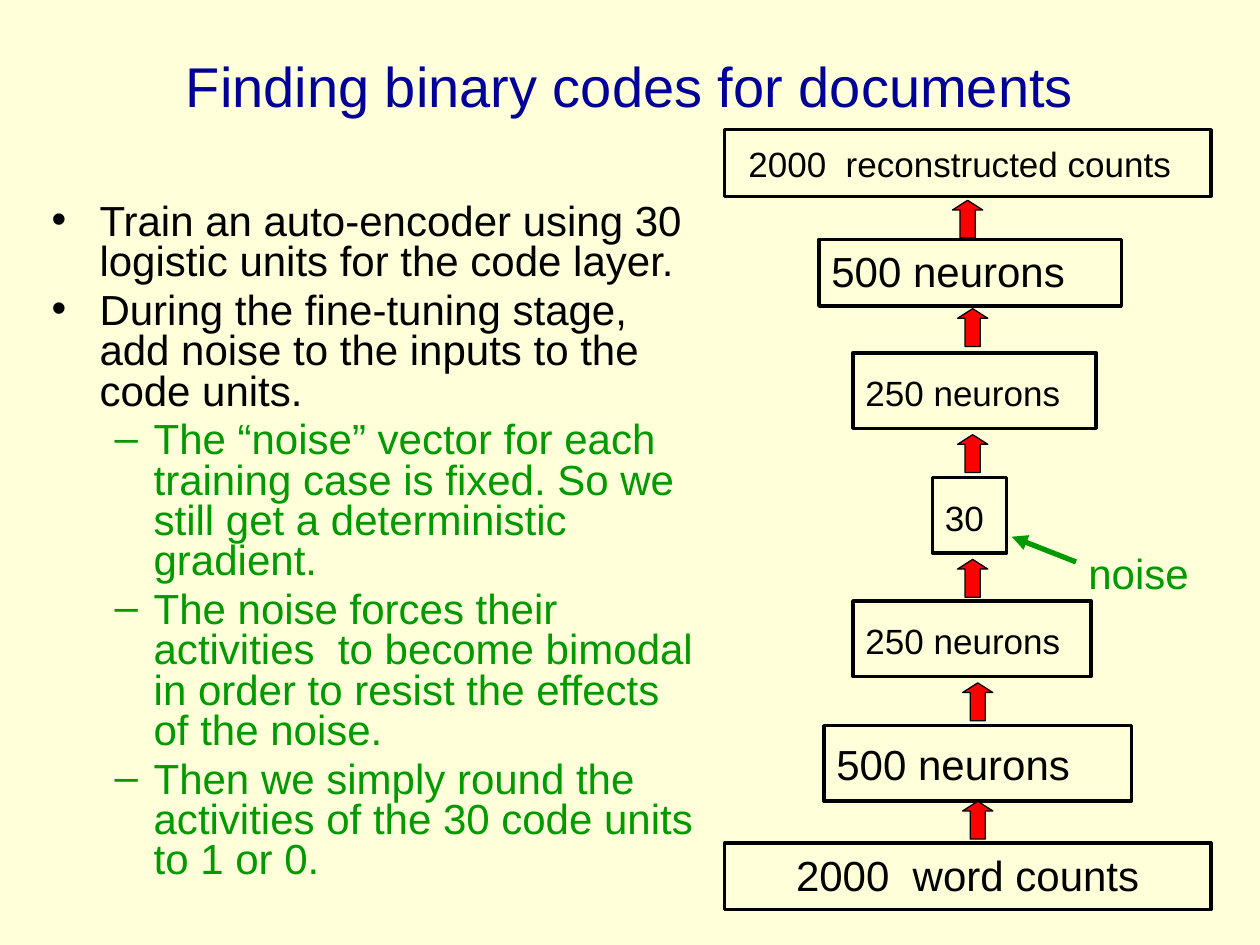
from dataclasses import dataclass

from pptx import Presentation
from pptx import util as u
from pptx.dml.color import RGBColor
from pptx.enum import shapes, text
from pptx.oxml.ns import qn
from lxml import etree

FONT = "Arial"
BLACK, GREEN, NAVY, RED, CREAM = "000000", "009900", "000099", "FF0000", "FFFFD9"
COLUMNS, ROWS = 100, 75  # the page grid
INSET_X, INSET_Y = 0.1, 0.05  # usual text insets in inches
ASCENT = 0.905  # part of the font size above the baseline

deck = Presentation()
deck.slide_width, deck.slide_height = u.Inches(10), u.Inches(7.5)


@dataclass
class Layer:
    label: str
    column: float
    row: float
    width: float
    height: float
    size: int
    line_size: int  # size that sets the height of the first line
    indent: float = 0
    centred: bool = False


@dataclass
class Point:
    words: str
    level: int = 0


LAYERS = [
    Layer("2000  reconstructed counts", 57.5, 10.3, 38.6, 5.3, 20, 24, indent=0.09),
    Layer("500 neurons", 65, 19, 24, 5.3, 24, 24),
    Layer("250 neurons", 67.7, 28, 19.3, 6, 20, 28),
    Layer("30", 74, 37.9, 5.9, 6, 20, 28),
    Layer("250 neurons", 67.7, 47.7, 18.9, 6, 20, 28),
    Layer("500 neurons", 65.4, 57.6, 24.4, 6, 24, 28),
    Layer("2000  word counts", 57.5, 66.9, 38.6, 5.3, 24, 24, centred=True),
]
ARROWS = [(75.6, 15.9), (76, 24.5), (76, 34.5), (76, 44.4), (76.4, 54.2), (76.4, 63.6)]
POINTS = [
    Point("Train an auto-encoder using 30 logistic units for the code layer."),
    Point("During the fine-tuning stage, add noise to the inputs to the code units."),
    Point("The “noise” vector for each training case is fixed. So we still get a "
          "deterministic gradient.", 1),
    Point("The noise forces their activities  to become bimodal in order to resist "
          "the effects of the noise.", 1),
    Point("Then we simply round the activities of the 30 code units to 1 or 0.", 1),
]
INDENTS = [(0.38, -0.38), (0.81, -0.31)]  # left margin and first line, by level


def colour(code: str) -> RGBColor:
    return RGBColor.from_string(code)


def across(columns: float) -> int:
    return round(deck.slide_width * columns / COLUMNS)


def down(rows: float) -> int:
    return round(deck.slide_height * rows / ROWS)


def area(column: float, row: float, width: float, height: float) -> tuple:
    return across(column), down(row), across(width), down(height)


def place(box, *cells: float) -> None:
    box.left, box.top, box.width, box.height = area(*cells)


def write(para, words: str, *, size: float = 24, ink: str = BLACK,
          align=text.PP_ALIGN.LEFT) -> None:
    para.alignment = align
    span = para.add_run()
    span.text = words
    span.font.name, span.font.size = FONT, u.Pt(size)
    span.font.color.rgb = colour(ink)


def set_frame(frame, *, left: float = INSET_X, top: float = INSET_Y,
              anchor=text.MSO_ANCHOR.TOP) -> None:
    frame.auto_size = text.MSO_AUTO_SIZE.NONE
    frame.word_wrap = True
    frame.vertical_anchor = anchor
    frame.margin_left, frame.margin_top = u.Inches(left), u.Inches(top)


def draw_layer(page, layer: Layer) -> None:
    box = page.shapes.add_shape(
        shapes.MSO_SHAPE.RECTANGLE,
        *area(layer.column, layer.row, layer.width, layer.height))
    box.shadow.inherit = False
    box.fill.background()
    box.line.color.rgb, box.line.width = colour(BLACK), u.Pt(2)
    drop = (layer.line_size - layer.size) * ASCENT / 72
    set_frame(box.text_frame, left=INSET_X + layer.indent, top=INSET_Y + drop)
    write(box.text_frame.paragraphs[0], layer.label, size=layer.size,
          align=text.PP_ALIGN.CENTER if layer.centred else text.PP_ALIGN.LEFT)


def draw_up_arrow(page, column: float, row: float) -> None:
    arrow = page.shapes.add_shape(shapes.MSO_SHAPE.UP_ARROW, *area(column, row, 2.4, 3))
    arrow.shadow.inherit = False
    arrow.adjustments[0], arrow.adjustments[1] = 0.5, 0.32
    arrow.fill.solid()
    arrow.fill.fore_color.rgb = colour(RED)
    arrow.line.color.rgb, arrow.line.width = colour(BLACK), u.Pt(0.75)


def draw_pointer(page, start: tuple, end: tuple) -> None:
    pointer = page.shapes.add_connector(
        shapes.MSO_CONNECTOR.STRAIGHT,
        across(start[0]), down(start[1]), across(end[0]), down(end[1]))
    pointer.line.color.rgb, pointer.line.width = colour(GREEN), u.Pt(3)
    etree.SubElement(pointer.line._get_or_add_ln(), qn("a:tailEnd"), type="triangle")
    etree.SubElement(pointer._element.spPr, qn("a:effectLst"))


def write_point(para, point: Point) -> None:
    para.level = point.level
    para.line_spacing, para.space_before = 0.8, u.Pt(4.8)
    write(para, point.words, ink=GREEN if point.level else BLACK)
    margin, first = INDENTS[point.level]
    properties = para._p.get_or_add_pPr()
    properties.set("marL", str(u.Inches(margin)))
    properties.set("indent", str(u.Inches(first)))
    bullet = etree.SubElement(properties, qn("a:buChar"))
    bullet.set("char", "•–"[point.level])


def main() -> None:
    page = deck.slides.add_slide(deck.slide_layouts[1])
    page.background.fill.solid()
    page.background.fill.fore_color.rgb = colour(CREAM)

    # Title and list
    title, body = page.placeholders
    place(title, 5, 0.5, 90, 12.5)
    set_frame(title.text_frame, anchor=text.MSO_ANCHOR.MIDDLE)
    write(title.text_frame.paragraphs[0], "Finding binary codes for documents",
          size=32, ink=NAVY, align=text.PP_ALIGN.CENTER)
    place(body, 3.1, 11.9, 53.5, 65.4 - 2.3)
    set_frame(body.text_frame, top=0.43)
    for index, point in enumerate(POINTS):
        frame = body.text_frame
        write_point(frame.add_paragraph() if index else frame.paragraphs[0], point)

    # Stack of layers with arrows between them
    for layer in LAYERS:
        draw_layer(page, layer)
    for column, row in ARROWS:
        draw_up_arrow(page, column, row)

    # Noise fed into the code layer
    noise = page.shapes.add_textbox(*area(85.4, 43, 15, 5))
    set_frame(noise.text_frame)
    write(noise.text_frame.paragraphs[0], "noise", ink=GREEN)
    draw_pointer(page, (85.4, 44.6), (80.3, 42.6))

    deck.save("out.pptx")


if __name__ == "__main__":
    main()
